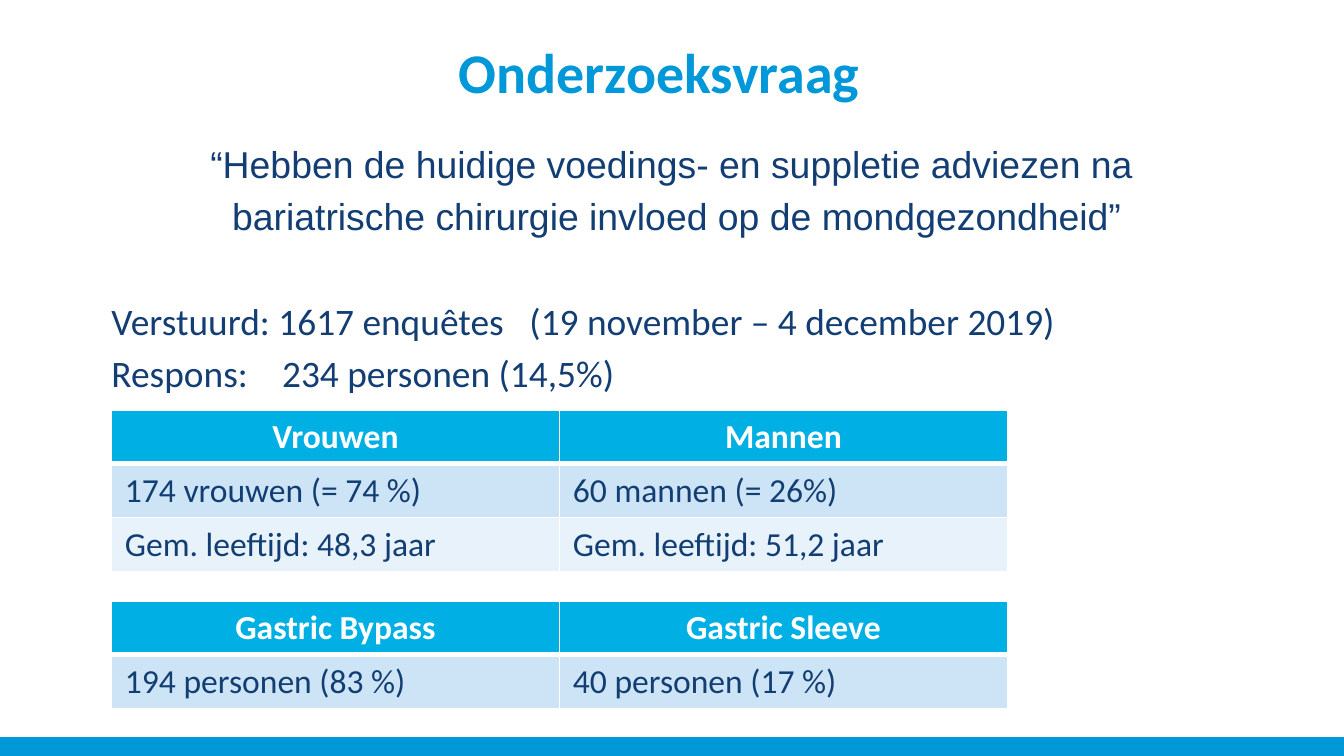
from pptx import Presentation
from pptx.dml.color import RGBColor
from pptx.enum.shapes import MSO_SHAPE
from pptx.enum.text import MSO_ANCHOR, PP_ALIGN
from pptx.oxml import parse_xml
from pptx.oxml.ns import nsdecls
from pptx.util import Inches, Pt

RECT = MSO_SHAPE.RECTANGLE
MIDDLE, TOP = MSO_ANCHOR.MIDDLE, MSO_ANCHOR.TOP
LEFT, CENTER = PP_ALIGN.LEFT, PP_ALIGN.CENTER

TITLE = ["Onderzoeksvraag"]
QUERY = [
    "“Hebben de huidige voedings- en suppletie adviezen na",
    " bariatrische chirurgie invloed op de mondgezondheid”",
]
SURVEY = [
    ("Verstuurd: 1617 enquêtes\t(19 november – 4 december 2019)", 3.11),
    ("Respons:\t234 personen (14,5%)", 1.27),
]
TABLES = [
    (3.05, 0.39, [
        ("Vrouwen", "Mannen"),
        ("174 vrouwen (= 74 %)", "60 mannen (= 26%)"),
        ("Gem. leeftijd: 48,3 jaar", "Gem. leeftijd: 51,2 jaar"),
    ]),
    (4.47, 0.4, [
        ("Gastric Bypass", "Gastric Sleeve"),
        ("194 personen (83 %)", "40 personen (17 %)"),
    ]),
]
THEME = {
    "blue": "0098D8", "navy": "133E74", "white": "FFFFFF",
    "head": "00B0E4", "bands": ("CCE4F5", "E7F2FA"),
    "sans": "Calibri", "plain": "Arial",
    "title": 30, "body": 20, "cell": 18, "thin": 1, "thick": 3,
}
WIDE = 10
HIGH = WIDE * 9 / 16
EDGE = 0.83
SPAN = WIDE - 2 * EDGE
HALF = WIDE / 3
ROW = 0.4
BAR = 0.14


def color(name):
    return RGBColor.from_string(THEME.get(name, name))


def style(para, size, ink, face="sans", bold=False, align=LEFT):
    para.alignment = align
    for run in para.runs:
        font = run.font
        font.name, font.size = THEME[face], Pt(THEME[size])
        font.bold, font.color.rgb = bold, color(ink)


def write(slide, box, lines, size, ink, gap=0, anchor=TOP, **look):
    frame = slide.shapes.add_textbox(*map(Inches, box)).text_frame
    frame.word_wrap, frame.vertical_anchor = True, anchor
    frame.margin_left = frame.margin_right = 0
    frame.margin_top = frame.margin_bottom = 0
    frame.text = "\n".join(lines)
    for i, para in enumerate(frame.paragraphs):
        if i:
            para.space_before = Pt(gap)
        style(para, size, ink, **look)
    return frame


def add_tab(para, pos):
    para._p.get_or_add_pPr().append(parse_xml(
        f'<a:tabLst {nsdecls("a")}><a:tab pos="{Inches(pos)}" algn="l"/></a:tabLst>'))


def rule(cell, row):
    props = cell._tc.get_or_add_tcPr()
    sides = {"L": "thin", "R": "thin",
             "T": "thick" if row == 1 else "thin",
             "B": "thin" if row else "thick"}
    for i, (side, size) in enumerate(sides.items()):
        props.insert(i, parse_xml(
            f'<a:ln{side} {nsdecls("a")} w="{Pt(THEME[size])}"><a:solidFill>'
            f'<a:srgbClr val="{THEME["white"]}"/></a:solidFill></a:ln{side}>'))


def draw_table(slide, top, first, rows):
    count = len(rows)
    table = slide.shapes.add_table(
        count, 2, Inches(EDGE), Inches(top), Inches(2 * HALF), Inches(ROW * count)).table
    table.rows[0].height = Inches(first)
    for r, row in enumerate(rows):
        fill = THEME["bands"][(r - 1) % 2] if r else "head"
        for c, text in enumerate(row):
            cell = table.cell(r, c)
            cell.text = text
            cell.fill.solid()
            cell.fill.fore_color.rgb = color(fill)
            rule(cell, r)
            style(cell.text_frame.paragraphs[0], "cell", "navy" if r else "white",
                  bold=not r, align=LEFT if r else CENTER)


def main():
    deck = Presentation()
    deck.slide_width, deck.slide_height = Inches(WIDE), Inches(HIGH)
    slide = deck.slides.add_slide(deck.slide_layouts[6])
    bar = slide.shapes.add_shape(
        RECT, 0, Inches(HIGH - BAR), Inches(WIDE), Inches(BAR))
    bar.shadow.inherit = False
    bar.fill.solid()
    bar.fill.fore_color.rgb = color("blue")
    bar.line.fill.background()

    write(slide, (0.26, 0.22, 9.29, 0.62), TITLE, "title", "blue",
          anchor=MIDDLE, bold=True, align=CENTER)
    write(slide, (EDGE, 1.05, SPAN, 0.75), QUERY, "body", "navy",
          gap=3.8, face="plain", align=CENTER)
    frame = write(slide, (EDGE, 2.22, SPAN, 0.75),
                  [text for text, _ in SURVEY], "body", "navy", gap=3.5)
    for para, (_, pos) in zip(frame.paragraphs, SURVEY):
        add_tab(para, pos)
    for table in TABLES:
        draw_table(slide, *table)
    deck.save("out.pptx")


if __name__ == "__main__":
    main()
